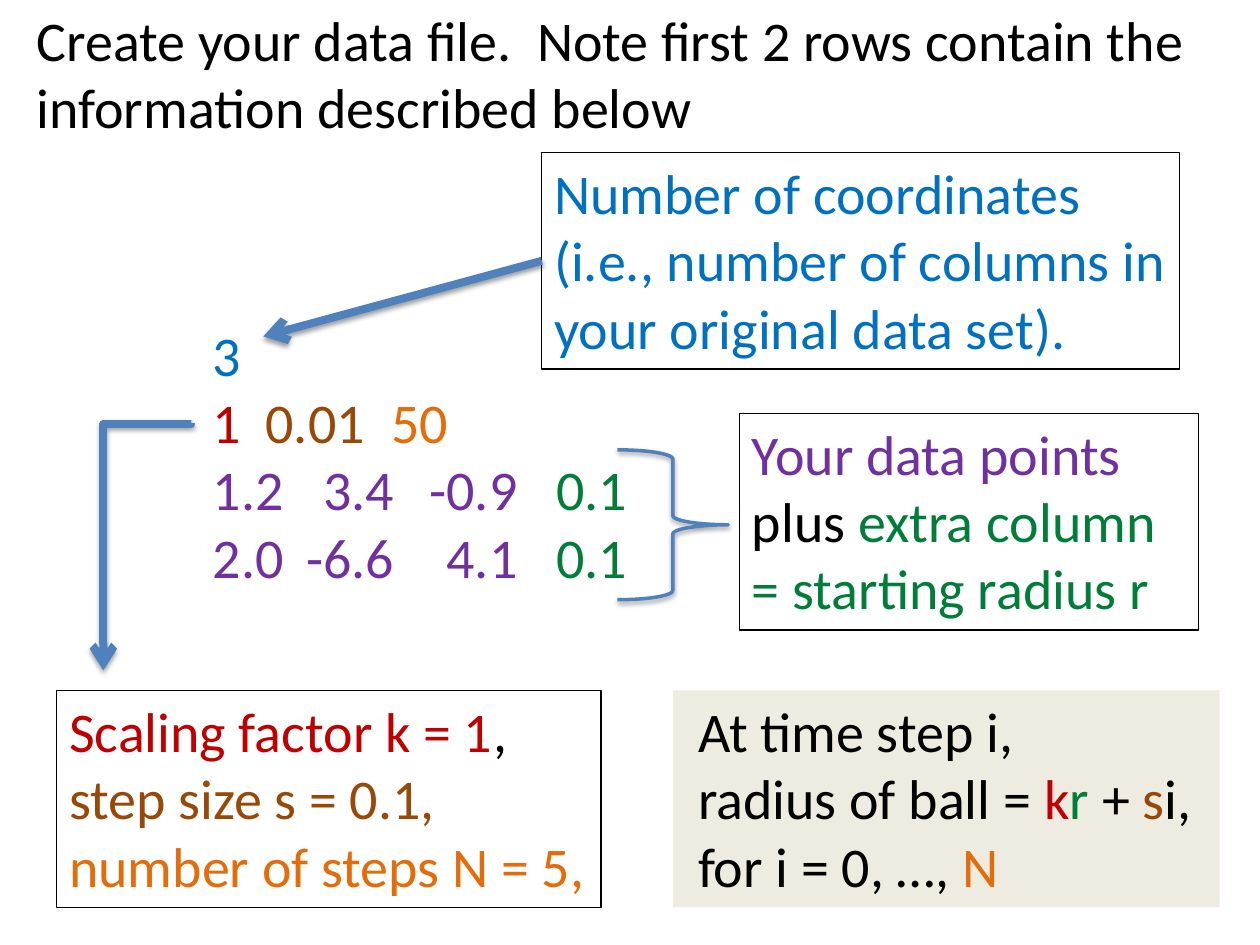
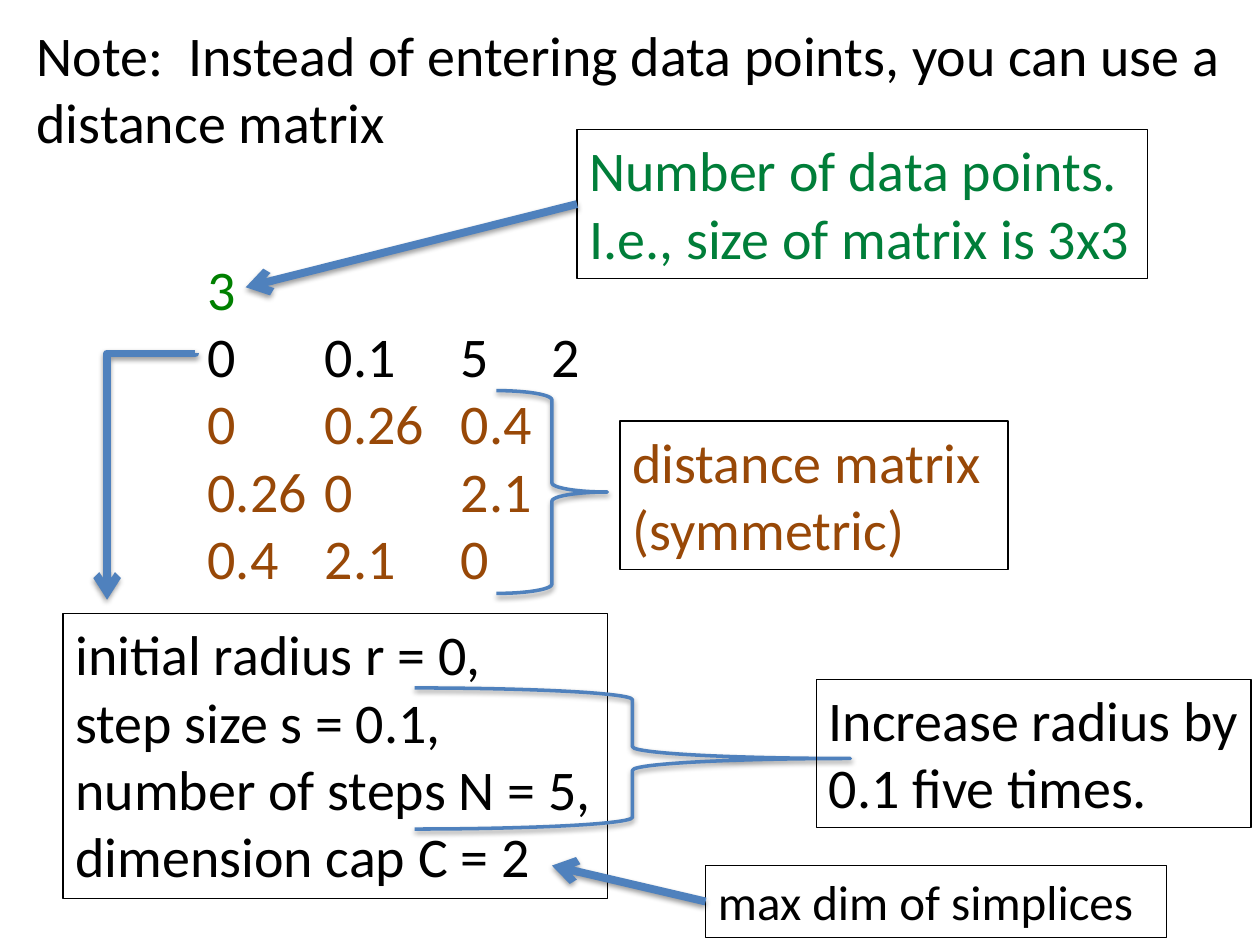
from dataclasses import dataclass
from typing import Optional

from lxml.etree import SubElement
from pptx import Presentation
from pptx.dml.color import RGBColor
from pptx.enum.shapes import MSO_CONNECTOR, MSO_SHAPE
from pptx.enum.text import MSO_ANCHOR, MSO_AUTO_SIZE, PP_ALIGN
from pptx.oxml.ns import qn
from pptx.util import Inches, Pt

COLORS = {
    "text": "000000",
    "mark": "4F81BD",
    "count": "0070C0",
    "scale": "C00000",
    "step": "984807",
    "steps": "E46C0A",
    "points": "7030A0",
    "radius": "007E39",
    "size": "008000",
    "panel": "EEECE1",
}
FONT = "Calibri"
TITLE_LEFT, TITLE_WIDTH, TITLE_HEIGHT = 0.19, 9.67, 1.18
ELBOW_WIDTH, ELBOW_DROP = 0.7, 1.96


@dataclass(frozen=True)
class Span:
    text: str
    color: str = "text"


@dataclass(frozen=True)
class Tabs:
    """Tab stops in inches from the text edge."""
    stops: tuple[float, ...]
    align: str = "l"


@dataclass(frozen=True)
class Line:
    spans: tuple[Span, ...]
    tabs: Optional[Tabs] = None


@dataclass(frozen=True)
class Area:
    left: float
    top: float
    width: float
    height: float

    def lengths(self):
        return [Inches(n) for n in (self.left, self.top, self.width, self.height)]


def line(*spans: Span, tabs: Optional[Tabs] = None) -> Line:
    return Line(spans, tabs)


def plain(*texts: str, color: str = "text", tabs: Optional[Tabs] = None) -> list[Line]:
    """One single-coloured line for each text."""
    return [line(Span(text, color), tabs=tabs) for text in texts]


def rgb(name: str) -> RGBColor:
    return RGBColor.from_string(COLORS[name])


def write_text(frame, lines: list[Line], *, size: float = 32, inset: float = 0.1,
               anchor=MSO_ANCHOR.TOP) -> None:
    frame.word_wrap = True
    frame.auto_size = MSO_AUTO_SIZE.NONE
    frame.vertical_anchor = anchor
    frame.margin_left, frame.margin_right = Inches(inset), Inches(0.08)
    for index, content in enumerate(lines):
        para = frame.paragraphs[0] if index == 0 else frame.add_paragraph()
        para.alignment = PP_ALIGN.LEFT
        if content.tabs:
            tab_list = SubElement(para._p.get_or_add_pPr(), qn("a:tabLst"))
            for stop in content.tabs.stops:
                SubElement(tab_list, qn("a:tab"), pos=str(Inches(stop)), algn=content.tabs.align)
        for span in content.spans:
            run = para.add_run()
            run.text = span.text
            run.font.name = FONT
            run.font.size = Pt(size)
            run.font.color.rgb = rgb(span.color)


def add_page(deck, title: str, top: float):
    page = deck.slides.add_slide(deck.slide_layouts[5])
    box = page.shapes.title
    area = Area(TITLE_LEFT, top, TITLE_WIDTH, TITLE_HEIGHT)
    box.left, box.top, box.width, box.height = area.lengths()
    write_text(box.text_frame, plain(title))
    return page


def add_text(page, area: Area, lines: list[Line], **text_format):
    box = page.shapes.add_textbox(*area.lengths())
    write_text(box.text_frame, lines, **text_format)
    return box


def add_note(page, area: Area, lines: list[Line], **text_format):
    """Text in a thin black frame."""
    box = add_text(page, area, lines, **text_format)
    box.line.color.rgb = rgb("text")
    box.line.width = Pt(0.75)
    return box


def style_mark(mark, width: float) -> None:
    """Blue line with a soft shadow below."""
    mark.line.color.rgb = rgb("mark")
    mark.line.width = Pt(width)
    properties = mark._element.spPr
    effects = properties.find(qn("a:effectLst"))
    if effects is None:
        effects = SubElement(properties, qn("a:effectLst"))
    shadow = SubElement(effects, qn("a:outerShdw"), blurRad=str(Pt(3.1)), dist=str(Pt(1.6)),
                        dir="5400000", rotWithShape="0")
    color = SubElement(shadow, qn("a:srgbClr"), val=COLORS["text"])
    SubElement(color, qn("a:alpha"), val="38000")


def add_brace(page, area: Area) -> None:
    brace = page.shapes.add_shape(MSO_SHAPE.RIGHT_BRACE, *area.lengths())
    brace.fill.background()
    brace.shadow.inherit = False
    style_mark(brace, 2)


def style_arrow(arrow) -> None:
    style_mark(arrow, 4.5)
    SubElement(arrow.line._get_or_add_ln(), qn("a:tailEnd"), type="arrow")


def add_arrow(page, note, tip_left: float, tip_top: float) -> None:
    """Arrow from the middle of a note's left side to the tip."""
    tip = Inches(tip_left), Inches(tip_top)
    arrow = page.shapes.add_connector(MSO_CONNECTOR.STRAIGHT, *tip, *tip)
    arrow.begin_connect(note, 1)
    style_arrow(arrow)


def add_elbow(page, right: float, top: float) -> None:
    """Arrow that runs left from (right, top), then down: a quarter-turned elbow."""
    middle_x, middle_y = right - ELBOW_WIDTH / 2, top + ELBOW_DROP / 2
    half_length, half_depth = ELBOW_DROP / 2, ELBOW_WIDTH / 2
    arrow = page.shapes.add_connector(
        MSO_CONNECTOR.ELBOW,
        Inches(middle_x - half_length), Inches(middle_y - half_depth),
        Inches(middle_x + half_length), Inches(middle_y + half_depth))
    properties = arrow._element.spPr
    properties.find(qn("a:xfrm")).set("rot", "5400000")
    guides = properties.find(qn("a:prstGeom")).find(qn("a:avLst"))
    SubElement(guides, qn("a:gd"), name="adj1", fmla="val 300")
    style_arrow(arrow)


def build_data_points(deck) -> None:
    page = add_page(deck, "Create your data file.  Note first 2 rows contain the "
                          "information described below", -0.01)
    add_brace(page, Area(4.9, 3.57, 0.88, 1.19))
    add_note(page, Area(5.87, 3.28, 3.64, 1.72), [line(
        Span("Your data points ", "points"), Span("plus "),
        Span("extra column = starting radius r", "radius"))])
    count_note = add_note(page, Area(4.3, 1.21, 5.06, 1.72), plain(
        "Number of coordinates (i.e., number of columns in your original data set).",
        color="count"))
    add_arrow(page, count_note, 2.09, 2.67)
    add_elbow(page, 1.52, 3.36)
    add_note(page, Area(0.45, 5.48, 4.32, 1.72), [
        line(Span("Scaling factor k = 1", "scale"), Span(",")),
        line(Span("step size s = 0.1,", "step")),
        line(Span("number of steps N = 5,", "steps")),
    ])
    panel = add_text(page, Area(5.34, 5.48, 4.34, 1.72), [
        line(Span("At time step i,")),
        line(Span("radius of ball = "), Span("k", "scale"), Span("r", "radius"),
             Span(" + "), Span("s", "step"), Span("i,")),
        line(Span("for i = 0, …, "), Span("N", "steps")),
    ], inset=0.2)
    panel.fill.solid()
    panel.fill.fore_color.rgb = rgb("panel")

    settings = Tabs((0.42, 1.42))
    columns = Tabs((1.44, 2.42, 3.29), "r")
    add_text(page, Area(1.59, 2.48, 3.63, 2.26), [
        line(Span("3", "count")),
        line(Span("1\t", "scale"), Span("0.01\t", "step"), Span("50", "steps"), tabs=settings),
        *[line(Span(point + "\t", "points"), Span("0.1", "radius"), tabs=columns)
          for point in ("1.2\t3.4\t-0.9", "2.0\t-6.6\t4.1")],
    ], anchor=MSO_ANCHOR.MIDDLE)


def build_distance_matrix(deck) -> None:
    page = add_page(deck, "Note:  Instead of entering data points, you can use a "
                          "distance matrix", 0.11)
    columns = Tabs((0.93, 2.01, 2.73))
    add_text(page, Area(1.55, 1.97, 5, 2.79), [
        *plain("3", color="size"),
        *plain("0\t0.1\t5\t2", tabs=columns),
        *plain("0\t0.26\t0.4", "0.26\t0\t2.1", "0.4\t2.1\t0", color="step", tabs=columns),
    ])
    add_brace(page, Area(3.94, 3.1, 0.88, 1.61))
    add_note(page, Area(4.92, 3.34, 3.08, 1.18),
             plain("distance matrix (symmetric)", color="step"))
    size_note = add_note(page, Area(4.58, 1.03, 4.53, 1.18), plain(
        "Number of data points.", "I.e., size of matrix is 3x3", color="radius"))
    add_arrow(page, size_note, 1.95, 2.28)
    add_elbow(page, 1.55, 2.8)
    add_note(page, Area(0.5, 4.87, 4.32, 2.26), plain(
        "initial radius r = 0,", "step size s = 0.1,",
        "number of steps N = 5,", "dimension cap C = 2"))
    add_brace(page, Area(3.29, 5.46, 3.46, 1.12))
    add_note(page, Area(6.48, 5.39, 3.45, 1.18), plain("Increase radius by 0.1 five times."))
    cap_note = add_note(page, Area(5.6, 6.87, 3.66, 0.57),
                        plain("max dim of simplices"), size=28)
    add_arrow(page, cap_note, 4.38, 6.87)


def main() -> None:
    deck = Presentation()
    deck.slide_width, deck.slide_height = Inches(10), Inches(7.5)
    build_data_points(deck)
    build_distance_matrix(deck)
    deck.save("out.pptx")


if __name__ == "__main__":
    main()
